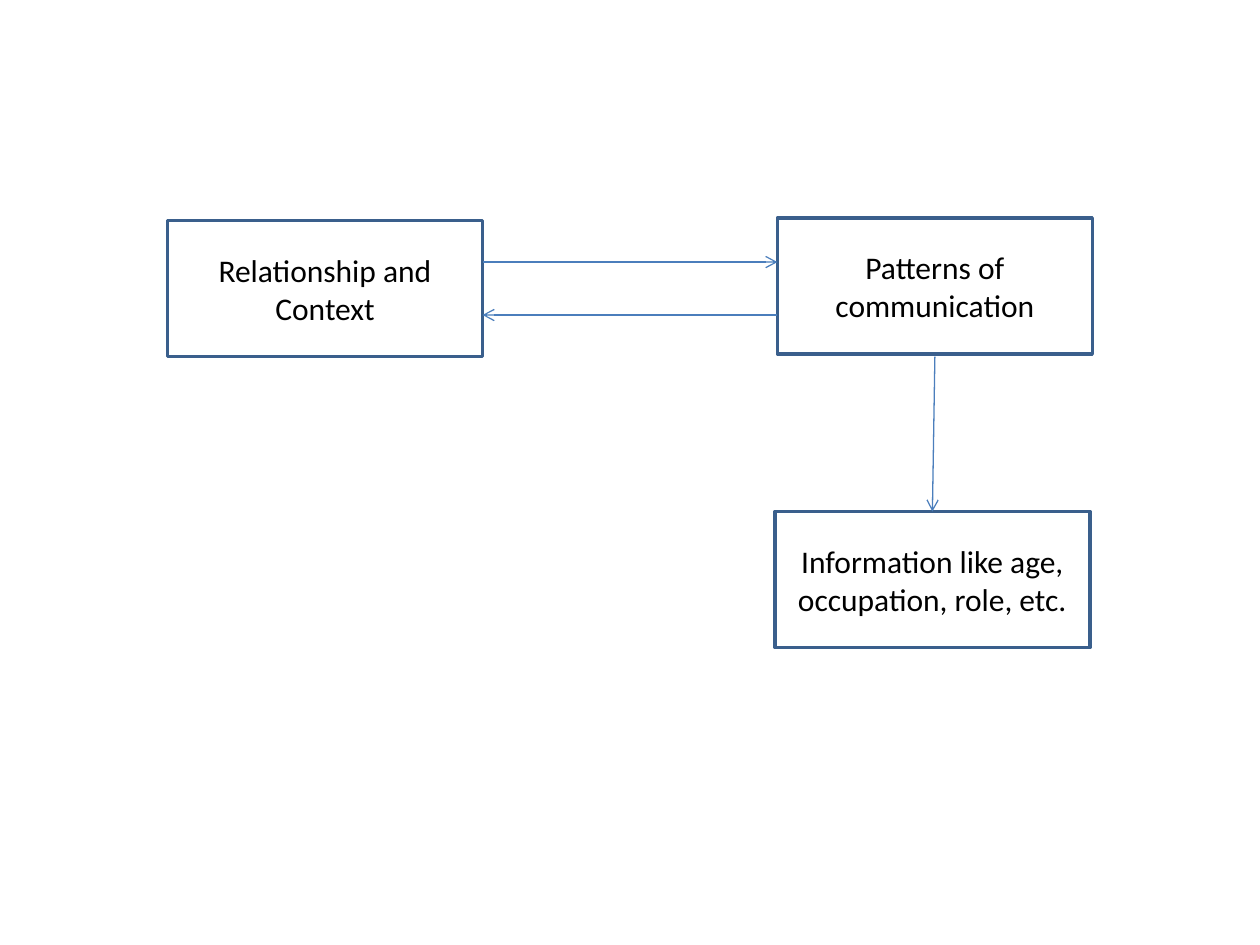
from lxml.etree import SubElement
from pptx import Presentation
from pptx.dml.color import RGBColor as Rgb
from pptx.enum.shapes import MSO_CONNECTOR as Link, MSO_SHAPE as Shape
from pptx.enum.text import MSO_ANCHOR as Anchor, PP_ALIGN as Align
from pptx.oxml.ns import qn
from pptx.util import Inches, Pt

COLORS = {"edge": "3A5F8C", "arrow": "4B7EBC", "text": "000000"}
WIDE, HIGH = 2.5, 1.08


def color(name):
    """Return the named colour."""
    return Rgb.from_string(COLORS[name])


def write(frame, text, size=18, font="Calibri", ink="text", align=Align.CENTER):
    """Put formatted text in a frame."""
    frame.word_wrap = True
    frame.vertical_anchor = Anchor.MIDDLE
    para = frame.paragraphs[0]
    para.alignment = align
    run = para.add_run()
    run.text = text
    run.font.size = Pt(size)
    run.font.name = font
    run.font.color.rgb = color(ink)


def add_node(slide, text, left, top):
    """Draw one outlined box with its label."""
    node = slide.shapes.add_shape(
        Shape.RECTANGLE, Inches(left), Inches(top), Inches(WIDE), Inches(HIGH))
    node.shadow.inherit = False
    node.fill.background()
    node.line.color.rgb = color("edge")
    node.line.width = Pt(2)
    write(node.text_frame, text)


def add_arrow(slide, start, end):
    """Draw a thin line with an open head at its end."""
    points = [Inches(value) for value in (*start, *end)]
    arrow = slide.shapes.add_connector(Link.STRAIGHT, *points)
    arrow.line.color.rgb = color("arrow")
    arrow.line.width = Pt(0.75)
    SubElement(arrow.line._get_or_add_ln(), qn("a:tailEnd"), type="arrow")
    SubElement(arrow._element.spPr, qn("a:effectLst"))


def add_flow(slide, left, top):
    """Place the three boxes and their arrows from a top left corner."""
    right, low = left + 4.84, top + 2.33
    add_node(slide, "Patterns of communication", right, top)
    add_node(slide, "Relationship and Context", left, top + 0.02)
    add_node(slide, "Information like age, occupation, role, etc.", right - 0.02, low)
    near, mid = left + WIDE, right + WIDE / 2
    add_arrow(slide, (near, top + 0.35), (right, top + 0.35))
    add_arrow(slide, (right, top + 0.77), (near, top + 0.77))
    add_arrow(slide, (mid, top + 1.1), (mid - 0.02, low))


def main():
    """Build and save the slide."""
    deck = Presentation()
    deck.slide_width, deck.slide_height = Inches(10), Inches(7.5)
    slide = deck.slides.add_slide(deck.slide_layouts[6])
    add_flow(slide, 1.33, 1.73)
    deck.save("out.pptx")


if __name__ == "__main__":
    main()
